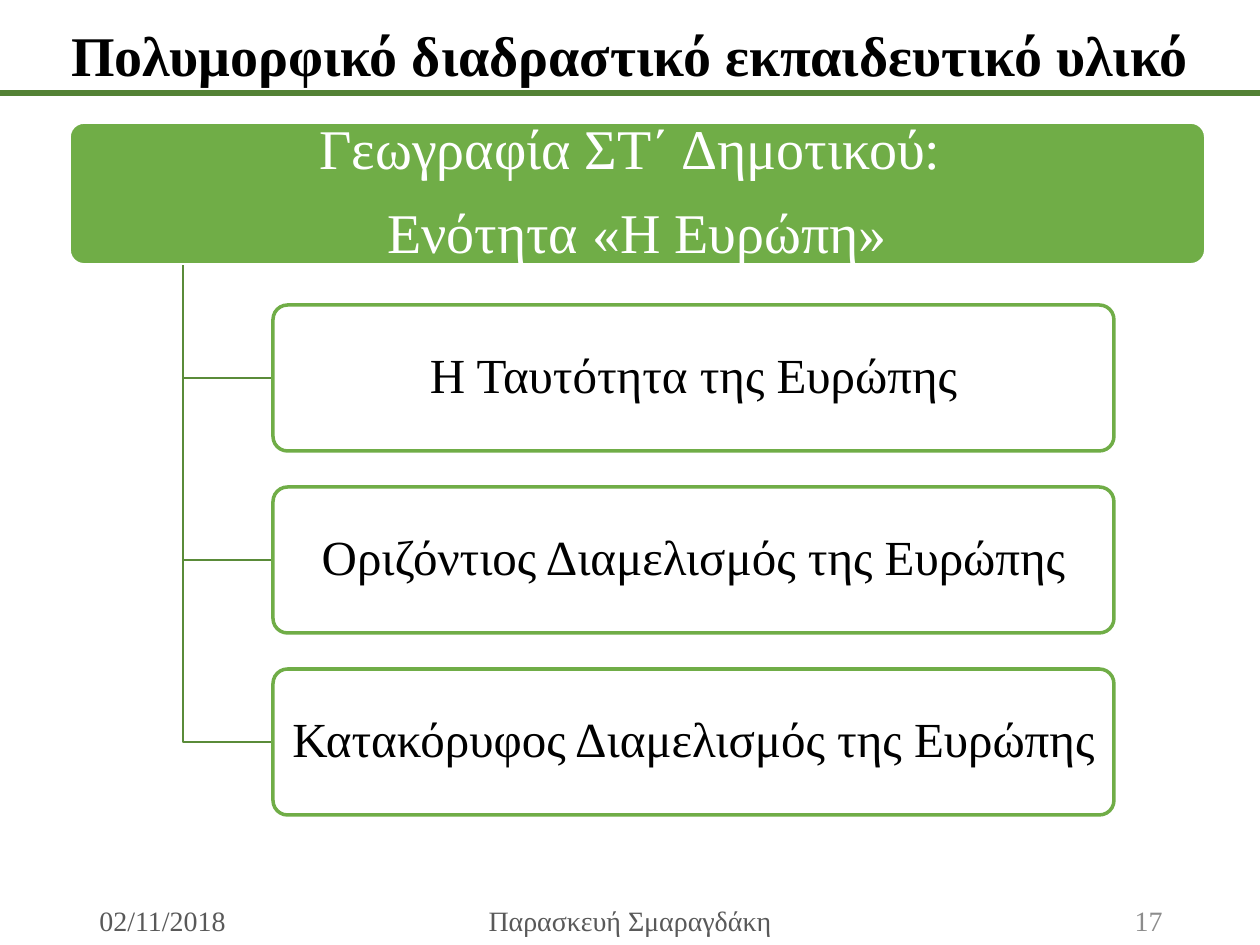
"""Build the slide on the interactive material for the geography unit on Europe."""
from lxml.etree import SubElement
from pptx import Presentation
from pptx.dml.color import RGBColor
from pptx.enum.shapes import MSO_CONNECTOR, MSO_SHAPE
from pptx.enum.text import MSO_ANCHOR, PP_ALIGN
from pptx.oxml.ns import qn
from pptx.util import Pt

PX = 914400 / 126
COLORS = {
    "white": "FFFFFF",
    "black": "000000",
    "green": "70AD47",
    "branch": "5A8B39",
    "rule": "548235",
    "footer": "595959",
    "number": "8C8C8C",
}


def px(*lengths):
    return [round(length * PX) for length in lengths]


def write(shape, text, size, color, align=PP_ALIGN.CENTER, bold=False, wrap=True):
    frame = shape.text_frame
    frame.text = text
    frame.word_wrap = wrap
    frame.vertical_anchor = MSO_ANCHOR.MIDDLE
    for paragraph in frame.paragraphs:
        paragraph.alignment = align
        for run in paragraph.runs:
            run.font.name = "Times New Roman"
            run.font.size = Pt(size)
            run.font.bold = bold
            run.font.color.rgb = RGBColor.from_string(COLORS[color])


presentation = Presentation()
presentation.slide_width, presentation.slide_height = px(1260, 945)
slide = presentation.slides.add_slide(presentation.slide_layouts[5])
shapes = slide.shapes

title = shapes.title
title.left, title.top, title.width, title.height = px(54, 14, 1152, 80)
write(title, "Πολυμορφικό διαδραστικό εκπαιδευτικό υλικό", 32, "black", bold=True, wrap=False)

rule = shapes.add_connector(MSO_CONNECTOR.STRAIGHT, *px(0, 93, 1260, 93))
rule.line.color.rgb = RGBColor.from_string(COLORS["rule"])
rule.line.width = Pt(3)
SubElement(rule._element.spPr, qn("a:effectLst"))

unit_text = "Γεωγραφία ΣΤ΄ Δημοτικού: \nΕνότητα «Η Ευρώπη»"
topics = [
    "Η Ταυτότητα της Ευρώπης",
    "Οριζόντιος Διαμελισμός της Ευρώπης",
    "Κατακόρυφος Διαμελισμός της Ευρώπης",
]
topic_left, topic_top, topic_width, topic_height, topic_step = 273, 305, 841, 146, 182
trunk_x, trunk_top = 183, 264

boxes = [(unit_text, (70, 123, 1135, 141), 32, "white", "green", "white", 1)]
for index, topic in enumerate(topics):
    top = topic_top + index * topic_step
    middle = top + topic_height // 2
    builder = shapes.build_freeform(*px(trunk_x, trunk_top))
    builder.add_line_segments([px(trunk_x, middle), px(topic_left, middle)], close=False)
    branch = builder.convert_to_shape()
    branch.shadow.inherit = False
    branch.fill.background()
    branch.line.color.rgb = RGBColor.from_string(COLORS["branch"])
    branch.line.width = Pt(1)
    bounds = (topic_left, top, topic_width, topic_height)
    boxes.append((topic, bounds, 28, "black", "white", "green", 2))

for text, bounds, size, text_color, fill, outline, line_width in boxes:
    box = shapes.add_shape(MSO_SHAPE.ROUNDED_RECTANGLE, *px(*bounds))
    box.adjustments[0] = 0.1
    box.shadow.inherit = False
    box.fill.solid()
    box.fill.fore_color.rgb = RGBColor.from_string(COLORS[fill])
    box.line.color.rgb = RGBColor.from_string(COLORS[outline])
    box.line.width = Pt(line_width)
    write(box, text, size, text_color)
    frame = box.text_frame
    frame.margin_left, frame.margin_right, frame.margin_top, frame.margin_bottom = px(8, 8, 5, 5)
    for paragraph in frame.paragraphs:
        paragraph.line_spacing = 0.9
    for paragraph in frame.paragraphs[:-1]:
        paragraph.space_after = Pt(13)
    if fill == "white":
        color = box.fill._xPr.find(qn("a:solidFill")).find(qn("a:srgbClr"))
        SubElement(color, qn("a:alpha"), val="90000")

footers = [
    ("02/11/2018", 87, 284, "footer", PP_ALIGN.LEFT),
    ("Παρασκευή Σμαραγδάκη", 417, 426, "footer", PP_ALIGN.CENTER),
    ("17", 891, 284, "number", PP_ALIGN.RIGHT),
]
for text, left, width, color, align in footers:
    footer = shapes.add_textbox(*px(left, 895, width, 50))
    write(footer, text, 16, color, align)

presentation.save("out.pptx")
